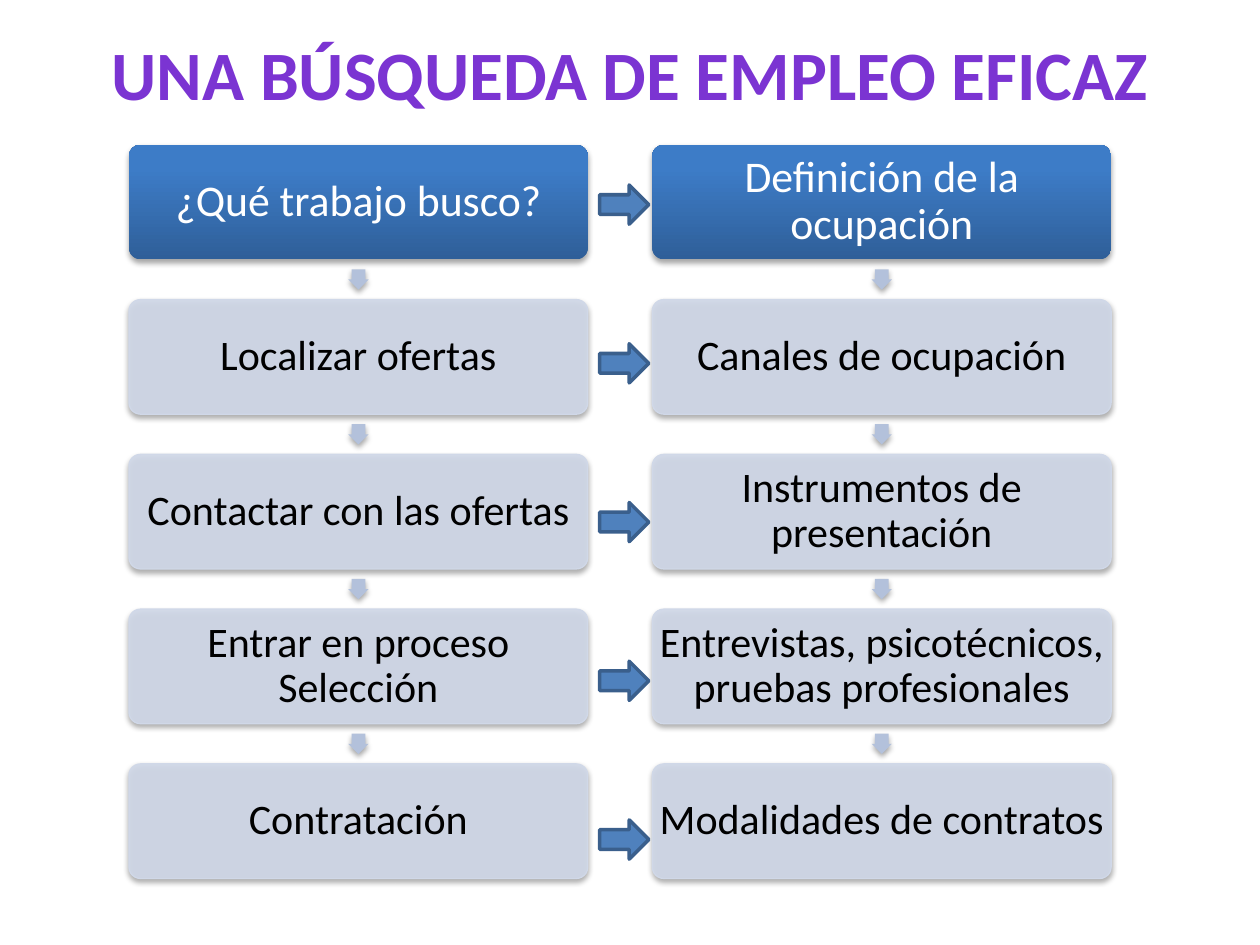
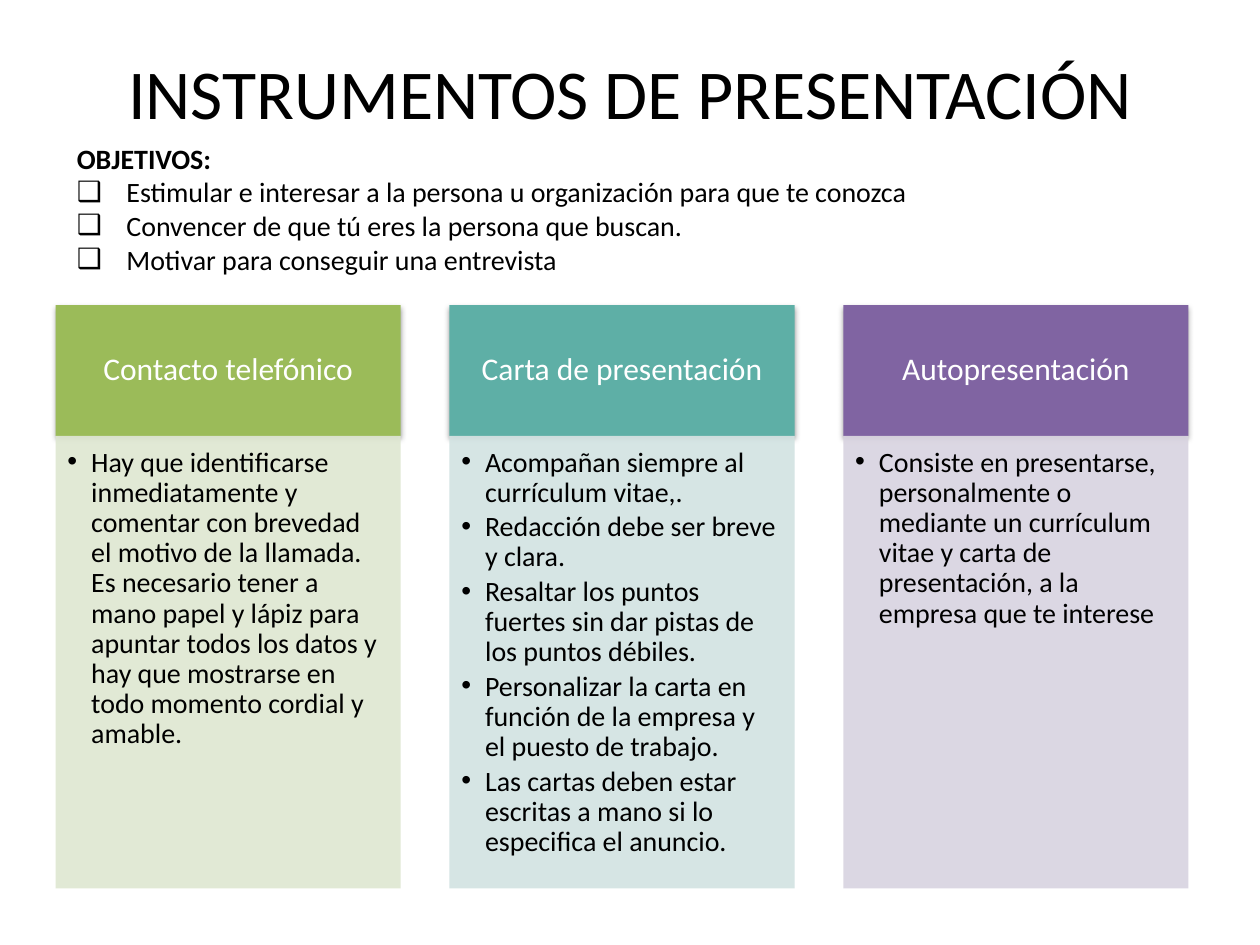
from dataclasses import dataclass

from lxml.etree import SubElement
from pptx import Presentation
from pptx.dml.color import RGBColor
from pptx.enum.shapes import MSO_SHAPE as Shape
from pptx.enum.text import MSO_ANCHOR as Anchor, MSO_AUTO_SIZE as AutoSize, PP_ALIGN as Align
from pptx.oxml.ns import qn
from pptx.util import Cm, Pt

FONT = "Calibri"
COLOURS = {
    "black": "000000", "white": "FFFFFF", "title": "7B34D2",
    "header_low": "2F5F99", "header_high": "3D7CC7",
    "step": "D0D8E8", "down": "B3C1DB", "across": "4F81BD", "across_edge": "3A5F8C",
    "green": "9BBB59", "green_pale": "DEE7D1",
    "teal": "5EAFA6", "teal_pale": "D2E3E2",
    "purple": "8064A2", "purple_pale": "D8D3E0",
}
STEP_COLUMNS = [
    ["¿Qué trabajo busco?", "Localizar ofertas", "Contactar con las ofertas",
     "Entrar en proceso Selección", "Contratación"],
    ["Definición de la ocupación", "Canales de ocupación", "Instrumentos de presentación",
     "Entrevistas, psicotécnicos, pruebas profesionales", "Modalidades de contratos"],
]
GOALS = [
    "Estimular e interesar a la persona u organización para que te conozca",
    "Convencer de que tú eres la persona que buscan.",
    "Motivar para conseguir una entrevista",
]
TOOLS = [
    ("Contacto telefónico", "green", [
        "Hay que identificarse inmediatamente y comentar con brevedad el motivo de la llamada. "
        "Es necesario tener a mano papel y lápiz para apuntar todos los datos y hay que "
        "mostrarse en todo momento cordial y amable."]),
    ("Carta de presentación", "teal", [
        "Acompañan siempre al currículum vitae,.",
        "Redacción debe ser breve y clara.",
        "Resaltar los puntos fuertes sin dar pistas de los puntos débiles.",
        "Personalizar la carta en función de la empresa y el puesto de trabajo.",
        "Las cartas deben estar escritas a mano si lo especifica el anuncio."]),
    ("Autopresentación", "purple", [
        "Consiste en presentarse, personalmente o mediante un currículum vitae y carta de "
        "presentación, a la empresa que te interese"]),
]


@dataclass
class Box:
    """A rectangle in centimetres."""
    left: float
    top: float
    width: float
    height: float

    def lengths(self):
        return [Cm(v) for v in (self.left, self.top, self.width, self.height)]


def colour(name):
    return RGBColor.from_string(COLOURS[name])


def set_all(target, **values):
    for name, value in values.items():
        setattr(target, name, value)


def set_frame(frame, anchor, insets):
    sides = ("margin_left", "margin_top", "margin_right", "margin_bottom")
    set_all(frame, word_wrap=True, auto_size=AutoSize.NONE, vertical_anchor=anchor,
            **{side: Cm(value) for side, value in zip(sides, insets)})


def write(para, text, size, tint="black", bold=False, **layout):
    span = para.add_run()
    span.text = text
    set_all(span.font, name=FONT, size=Pt(size), bold=bold)
    span.font.color.rgb = colour(tint)
    set_all(para, **layout)


def next_para(frame):
    first = frame.paragraphs[0]
    return frame.add_paragraph() if first.runs else first


def add_bullet(para, mark, indent):
    props = para._p.get_or_add_pPr()
    props.set("marL", str(Cm(indent)))
    props.set("indent", str(-Cm(indent)))
    SubElement(props, qn("a:buFont"), typeface="Arial")
    SubElement(props, qn("a:buChar"), char=mark)


def add_alpha(shape, percent):
    fill = shape._element.spPr.find(qn("a:solidFill"))
    SubElement(fill[0], qn("a:alpha"), val=str(percent * 1000))


def add_shadow(shape):
    effects = shape._element.spPr.find(qn("a:effectLst"))
    shadow = SubElement(effects, qn("a:outerShdw"), blurRad="40000", dist="23000",
                        dir="5400000", rotWithShape="0")
    tint = SubElement(shadow, qn("a:srgbClr"), val=COLOURS["black"])
    SubElement(tint, qn("a:alpha"), val="35000")


def add_block(page, kind, box, fill, line=None, line_width=0.75, shadow=False):
    shape = page.shapes.add_shape(kind, *box.lengths())
    shape.shadow.inherit = False
    shape.fill.solid()
    shape.fill.fore_color.rgb = colour(fill)
    if line:
        shape.line.color.rgb = colour(line)
        shape.line.width = Pt(line_width)
    else:
        shape.line.fill.background()
    if shadow:
        add_shadow(shape)
    return shape


def add_page(deck, title, box, size, tint="black", bold=False):
    page = deck.slides.add_slide(deck.slide_layouts[5])
    holder = page.shapes.title
    left, top, width, height = box.lengths()
    set_all(holder, left=left, top=top, width=width, height=height)
    set_frame(holder.text_frame, Anchor.MIDDLE, (0.25, 0.13, 0.25, 0.13))
    write(holder.text_frame.paragraphs[0], title, size, tint, bold, alignment=Align.CENTER)
    return page


# Column of steps joined by small down arrows
def add_steps(page, box, texts, pitch):
    arrow = 0.41
    for row, text in enumerate(texts):
        top = box.top + row * pitch
        is_header = row == 0
        step = add_block(page, Shape.ROUNDED_RECTANGLE, Box(box.left, top, box.width, box.height),
                         "step", None if is_header else "step", shadow=True)
        step.adjustments[0] = 0.1
        if is_header:
            step.fill.gradient()
            step.fill.gradient_angle = 90
            low, high = step.fill.gradient_stops
            low.color.rgb, high.color.rgb = colour("header_low"), colour("header_high")
            low.position, high.position = 0, 0.8
        else:
            add_alpha(step, 90)
        set_frame(step.text_frame, Anchor.MIDDLE, (0, 0.08, 0, 0.08))
        write(step.text_frame.paragraphs[0], text, 25 if is_header else 24,
              "white" if is_header else "black", alignment=Align.CENTER, line_spacing=0.9)
        if row < len(texts) - 1:
            gap = pitch - box.height
            place = Box(box.left + (box.width - arrow) / 2,
                        top + box.height + (gap - arrow) / 2, arrow, arrow)
            down = add_block(page, Shape.RIGHT_ARROW, place, "down", shadow=True)
            down.rotation = 90
            down.adjustments[0], down.adjustments[1] = 0.67, 0.5


# Arrows from the left column to the right one
def add_cross_arrows(page, box, count, pitch):
    for row in range(count):
        place = Box(box.left, box.top + row * pitch, box.width, box.height)
        add_block(page, Shape.RIGHT_ARROW, place, "across", "across_edge", 2)


# List of goals under the title
def add_goals(page, box):
    frame = page.shapes.add_textbox(*box.lengths()).text_frame
    set_frame(frame, Anchor.TOP, (0.25, 0.13, 0.25, 0.13))
    write(next_para(frame), "OBJETIVOS:", 16, bold=True)
    for goal in GOALS:
        para = next_para(frame)
        write(para, goal, 16)
        add_bullet(para, "❑", 1.0)


# Card with a coloured head and a pale body
def add_card(page, box, head_height, heading, tint, points):
    head = add_block(page, Shape.RECTANGLE, Box(box.left, box.top, box.width, head_height),
                     tint, shadow=True)
    set_frame(head.text_frame, Anchor.MIDDLE, (0.36, 0.2, 0.36, 0.2))
    write(head.text_frame.paragraphs[0], heading, 18, "white",
          alignment=Align.CENTER, line_spacing=0.9)
    body = add_block(page, Shape.RECTANGLE, Box(box.left, box.top + head_height, box.width,
                                                box.height - head_height), tint + "_pale")
    add_alpha(body, 90)
    set_frame(body.text_frame, Anchor.TOP, (0.24, 0.24, 0.32, 0.36))
    for point in points:
        para = next_para(body.text_frame)
        write(para, point, 16, alignment=Align.LEFT, line_spacing=0.9, space_after=Pt(2.4))
        add_bullet(para, "•", 0.48)


def build_search_page(deck):
    page = add_page(deck, "UNA BÚSQUEDA DE EMPLEO EFICAZ", Box(1.27, 0, 22.86, 2.92),
                    39.6, "title", True)
    for column, texts in enumerate(STEP_COLUMNS):
        add_steps(page, Box(2.6 + column * 10.55, 2.92, 9.25, 2.31), texts, 3.12)
    add_cross_arrows(page, Box(12.09, 3.73, 0.99, 0.79), len(STEP_COLUMNS[0]), 3.2)


def build_tools_page(deck):
    page = add_page(deck, "INSTRUMENTOS DE PRESENTACIÓN", Box(1.27, 0.76, 22.86, 2.16), 40)
    for column, (heading, tint, points) in enumerate(TOOLS):
        add_card(page, Box(1.12 + column * 7.94, 6.15, 6.96, 11.76), 2.64, heading, tint, points)
    add_goals(page, Box(1.3, 2.72, 22.81, 3.68))


def main():
    deck = Presentation()
    set_all(deck, slide_width=Cm(25.4), slide_height=Cm(19.05))
    build_search_page(deck)
    build_tools_page(deck)
    deck.save("out.pptx")


if __name__ == "__main__":
    main()
